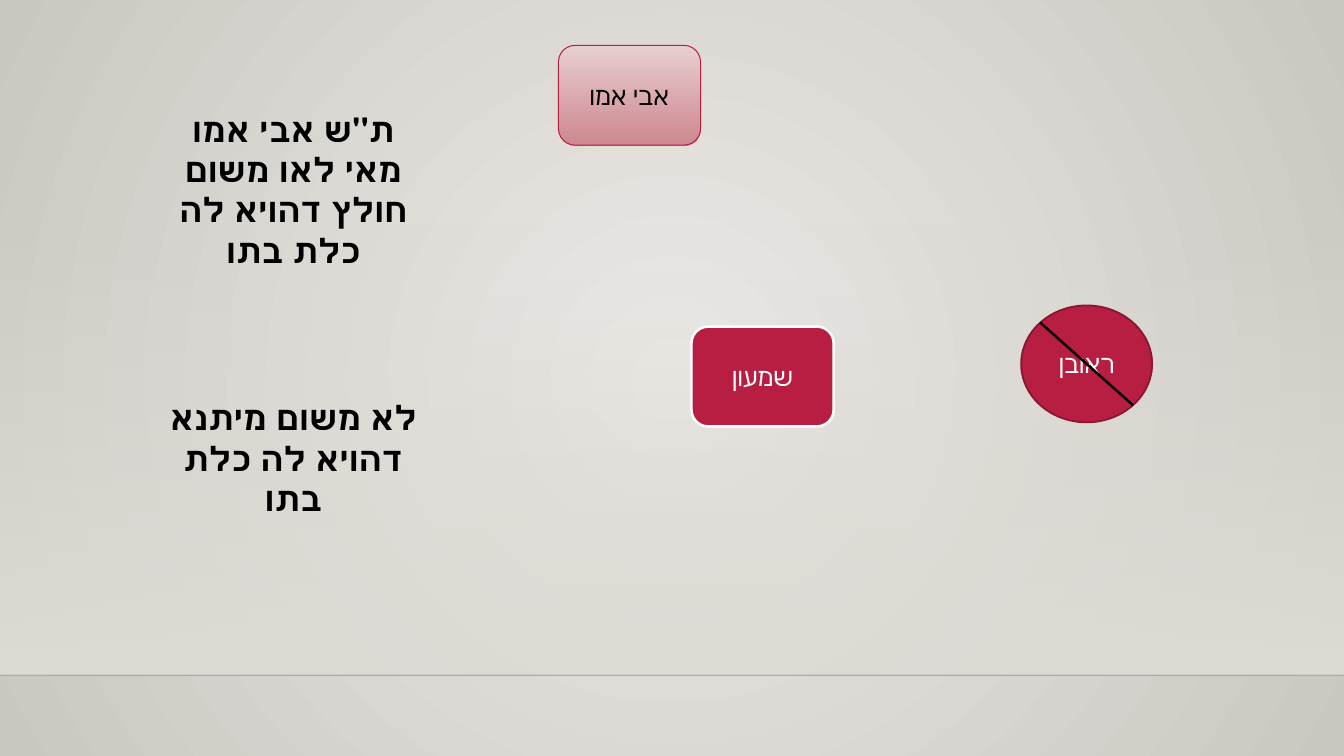
from dataclasses import dataclass
from typing import Optional

from lxml.etree import SubElement
from pptx import Presentation
from pptx.dml.color import RGBColor
from pptx.enum.shapes import MSO_CONNECTOR, MSO_SHAPE
from pptx.enum.text import MSO_ANCHOR, MSO_AUTO_SIZE, PP_ALIGN
from pptx.oxml import parse_xml
from pptx.oxml.ns import nsdecls, qn
from pptx.util import Inches, Pt


@dataclass(frozen=True)
class Theme:
    font: str = "Calibri"
    note_size: int = 24
    label_size: int = 18
    ink: str = "000000"
    white: str = "FFFFFF"
    crimson: str = "B71E42"
    dark_crimson: str = "871631"
    background: tuple = (("ECEAE7", 100), ("CAC7C1", 100))
    wall: tuple = (("DFDBD5", 0), ("DFDBD5", 100))
    rose: tuple = (("EAD1D3", 100), ("CD828A", 92))


@dataclass(frozen=True)
class Box:
    x: float
    y: float
    w: float
    h: float


@dataclass(frozen=True)
class Note:
    text: str
    box: Box


@dataclass(frozen=True)
class Person:
    name: str
    kind: MSO_SHAPE
    box: Box
    fill: Optional[str]
    line: str
    width: float
    color: str


THEME = Theme()
WIDTH, HEIGHT = Inches(13.333), Inches(7.5)
ROUND, OVAL = MSO_SHAPE.ROUNDED_RECTANGLE, MSO_SHAPE.OVAL
CARD_W, CARD_H = 10.58, 13.2
NOTE_X, NOTE_W = 11.85, 19.95
HORIZON = 89.33
WALL_TOP = 29.47

NOTES = [
    Note("ת''ש אבי אמו מאי לאו משום חולץ דהויא לה כלת בתו", Box(NOTE_X, 13.73, NOTE_W, 17.47)),
    Note("לא משום מיתנא דהויא לה כלת בתו", Box(NOTE_X, 51.87, NOTE_W, 12.13)),
]
PEOPLE = [
    Person("שמעון", ROUND, Box(51.45, 43.2, CARD_W, CARD_H),
           THEME.crimson, THEME.white, 1.75, THEME.white),
    Person("אבי אמו", ROUND, Box(41.55, 6, CARD_W, CARD_H),
           None, THEME.crimson, 0.75, THEME.ink),
    Person("ראובן", OVAL, Box(75.98, 40.4, 9.75, 15.47),
           THEME.crimson, THEME.dark_crimson, 1.25, THEME.white),
]


def across(share: float) -> int:
    return round(WIDTH * share / 100)


def down(share: float) -> int:
    return round(HEIGHT * share / 100)


def place(box: Box) -> tuple:
    return across(box.x), down(box.y), across(box.w), down(box.h)


def set_gradient(fill, props, stops: tuple, radial: bool = False) -> None:
    fill.gradient()
    old = props.find(qn("a:gradFill"))
    colors = "".join(
        f'<a:gs pos="{i * 100000}"><a:srgbClr val="{color}">'
        f'<a:alpha val="{alpha * 1000}"/></a:srgbClr></a:gs>'
        for i, (color, alpha) in enumerate(stops))
    shade = ('<a:path path="circle"><a:fillToRect l="50000" t="50000" r="50000" b="50000"/></a:path>'
             if radial else '<a:lin ang="5400000" scaled="0"/>')
    props.replace(old, parse_xml(
        f'<a:gradFill {nsdecls("a")} rotWithShape="1"><a:gsLst>{colors}</a:gsLst>{shade}</a:gradFill>'))


def write(sp, text: str, *, size: int, color: str, bold: bool = False,
          anchor: MSO_ANCHOR = MSO_ANCHOR.TOP) -> None:
    tf = sp.text_frame
    tf.word_wrap = True
    tf.vertical_anchor = anchor
    p = tf.paragraphs[0]
    p.alignment = PP_ALIGN.CENTER
    p._p.get_or_add_pPr().set("rtl", "1")
    r = p.add_run()
    r.text = text
    r.font.name = THEME.font
    r.font.size = Pt(size)
    r.font.bold = bold
    r.font.color.rgb = RGBColor.from_string(color)


def add_note(s, note: Note) -> None:
    sp = s.shapes.add_textbox(*place(note.box))
    write(sp, note.text, size=THEME.note_size, color=THEME.ink, bold=True)
    sp.text_frame.auto_size = MSO_AUTO_SIZE.SHAPE_TO_FIT_TEXT


def add_person(s, person: Person) -> None:
    sp = s.shapes.add_shape(person.kind, *place(person.box))
    sp.shadow.inherit = False
    if person.fill:
        sp.fill.solid()
        sp.fill.fore_color.rgb = RGBColor.from_string(person.fill)
    else:
        set_gradient(sp.fill, sp._element.spPr, THEME.rose)
    sp.line.color.rgb = RGBColor.from_string(person.line)
    sp.line.width = Pt(person.width)
    write(sp, person.name, size=THEME.label_size, color=person.color, anchor=MSO_ANCHOR.MIDDLE)


def add_line(s, x1: float, y1: float, x2: float, y2: float, *,
             width: float, alpha: int = 100) -> None:
    line = s.shapes.add_connector(
        MSO_CONNECTOR.STRAIGHT, across(x1), down(y1), across(x2), down(y2))
    line.line.color.rgb = RGBColor.from_string(THEME.ink)
    line.line.width = Pt(width)
    props = line._element.spPr
    SubElement(props.find(".//" + qn("a:srgbClr")), qn("a:alpha"), val=str(alpha * 1000))
    SubElement(props, qn("a:effectLst"))


def add_backdrop(s) -> None:
    bg = s.background
    set_gradient(bg.fill, s._element.cSld.bg.bgPr, THEME.background, radial=True)
    wall = s.shapes.add_shape(
        MSO_SHAPE.RECTANGLE, *place(Box(0, WALL_TOP, 100, HORIZON - WALL_TOP)))
    wall.shadow.inherit = False
    wall.line.fill.background()
    set_gradient(wall.fill, wall._element.spPr, THEME.wall)
    add_line(s, 0, HORIZON, 100, HORIZON, width=1, alpha=20)


def main() -> None:
    prs = Presentation()
    prs.slide_width, prs.slide_height = WIDTH, HEIGHT
    s = prs.slides.add_slide(prs.slide_layouts[6])
    add_backdrop(s)
    for note in NOTES:
        add_note(s, note)
    for person in PEOPLE:
        add_person(s, person)
    add_line(s, 77.4, 42.67, 84.3, 53.6, width=1.75)
    prs.save("out.pptx")


if __name__ == "__main__":
    main()
